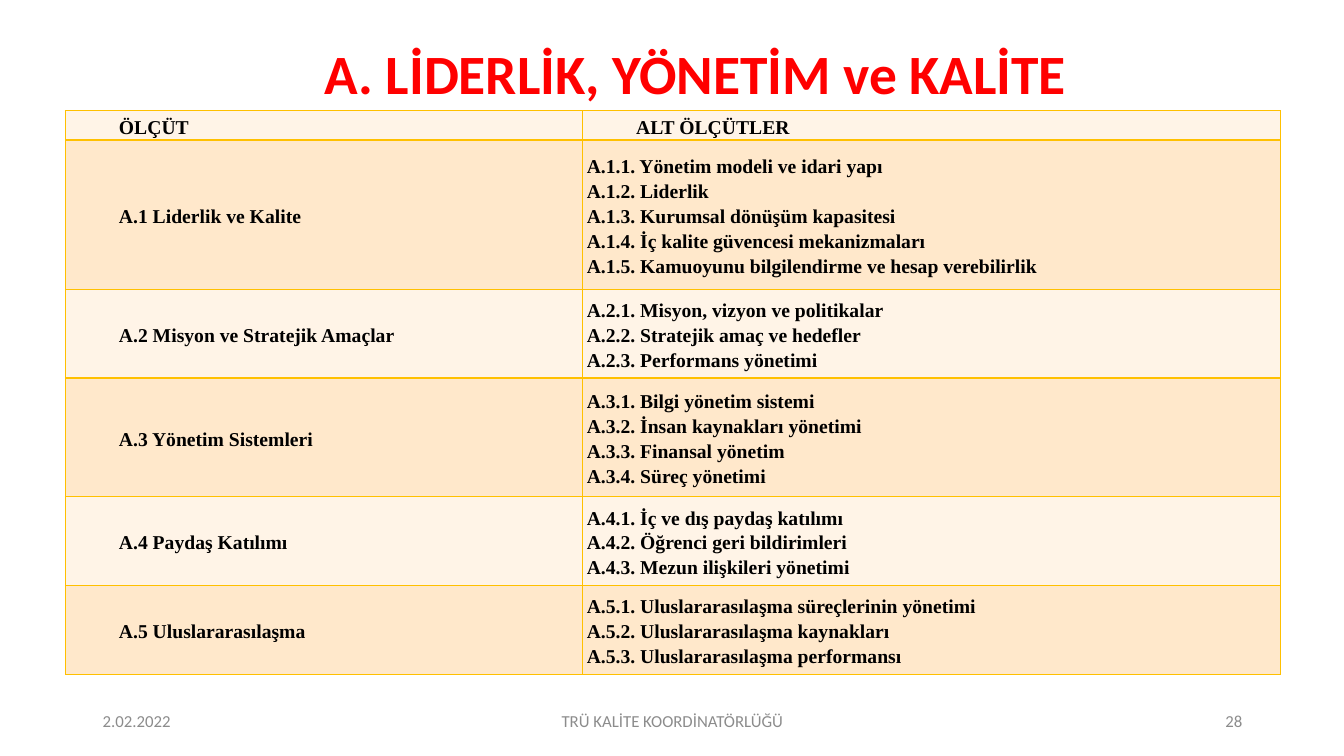
from dataclasses import dataclass

from lxml import etree
from pptx import Presentation
from pptx.dml.color import RGBColor
from pptx.enum.text import MSO_ANCHOR, PP_ALIGN
from pptx.oxml.ns import qn
from pptx.slide import Slide
from pptx.table import Table, _Cell
from pptx.text.text import _Paragraph
from pptx.util import Inches, Pt

LEFT, CENTER, RIGHT = PP_ALIGN.LEFT, PP_ALIGN.CENTER, PP_ALIGN.RIGHT
JUSTIFY = PP_ALIGN.JUSTIFY
MIDDLE = MSO_ANCHOR.MIDDLE

COLORS = {
    "title": "FF0000",
    "footer": "8C8C8C",
    "text": "000000",
    "border": "FFC000",
    "light": "FFF4E7",
    "dark": "FFE8CB",
}
TITLE_FONT = {"name": "Calibri", "size": Pt(39.6), "bold": True}
FOOTER_FONT = {"name": "Calibri", "size": Pt(12), "bold": False}
TABLE_FONT = {"name": "Times New Roman", "size": Pt(14), "bold": True}
CELL_FORMAT = {
    "vertical_anchor": MIDDLE,
    "margin_left": Inches(0.04),
    "margin_right": Inches(0.04),
    "margin_top": Inches(0.01),
    "margin_bottom": Inches(0),
}
COLUMN_WIDTHS = (5.13, 6.92)
HEADER_HEIGHT = 0.29
FIRST_LINE_INDENT = Inches(0.49)


@dataclass(frozen=True)
class Label:
    text: str
    left: float
    top: float
    width: float
    height: float
    alignment: PP_ALIGN
    font: dict
    color: str
    line_spacing: float = 1.0


@dataclass(frozen=True)
class Criterion:
    name: str
    height: float
    subcriteria: tuple[str, ...]


LABELS = (
    Label("A. LİDERLİK, YÖNETİM ve KALİTE", 1.38, 0.4, 11.04, 0.72, CENTER, TITLE_FONT, "title", 0.9),
    Label("2.02.2022", 0.92, 6.95, 3, 0.4, LEFT, FOOTER_FONT, "footer"),
    Label("TRÜ KALİTE KOORDİNATÖRLÜĞÜ", 4.42, 6.95, 4.5, 0.4, CENTER, FOOTER_FONT, "footer"),
    Label("28", 9.42, 6.95, 3, 0.4, RIGHT, FOOTER_FONT, "footer"),
)

CRITERIA = (
    Criterion("Liderlik ve Kalite", 1.48, (
        "Yönetim modeli ve idari yapı",
        "Liderlik",
        "Kurumsal dönüşüm kapasitesi",
        "İç kalite güvencesi mekanizmaları",
        "Kamuoyunu bilgilendirme ve hesap verebilirlik",
    )),
    Criterion("Misyon ve Stratejik Amaçlar", 0.88, (
        "Misyon, vizyon ve politikalar",
        "Stratejik amaç ve hedefler",
        "Performans yönetimi",
    )),
    Criterion("Yönetim Sistemleri", 1.18, (
        "Bilgi yönetim sistemi",
        "İnsan kaynakları yönetimi",
        "Finansal yönetim",
        "Süreç yönetimi",
    )),
    Criterion("Paydaş Katılımı", 0.88, (
        "İç ve dış paydaş katılımı",
        "Öğrenci geri bildirimleri",
        "Mezun ilişkileri yönetimi",
    )),
    Criterion("Uluslararasılaşma", 0.88, (
        "Uluslararasılaşma süreçlerinin yönetimi",
        "Uluslararasılaşma kaynakları",
        "Uluslararasılaşma performansı",
    )),
)


def apply_format(target: object, values: dict) -> None:
    for name, value in values.items():
        setattr(target, name, value)


def write_text(paragraph: _Paragraph, text: str, font: dict, color: str,
               alignment: PP_ALIGN, line_spacing: float) -> None:
    run = paragraph.add_run()
    run.text = text
    apply_format(run.font, font)
    run.font.color.rgb = RGBColor.from_string(COLORS[color])
    apply_format(paragraph, {"alignment": alignment, "line_spacing": line_spacing})


def add_label(slide: Slide, label: Label) -> None:
    box = slide.shapes.add_textbox(
        Inches(label.left), Inches(label.top), Inches(label.width), Inches(label.height))
    frame = box.text_frame
    apply_format(frame, {"word_wrap": True, "vertical_anchor": MIDDLE})
    write_text(frame.paragraphs[0], label.text, label.font, label.color,
               label.alignment, label.line_spacing)


def add_borders(cell: _Cell) -> None:
    properties = cell._tc.get_or_add_tcPr()
    for side in ("lnL", "lnR", "lnT", "lnB"):
        line = etree.SubElement(properties, qn(f"a:{side}"), w=str(Pt(1)))
        fill = etree.SubElement(line, qn("a:solidFill"))
        etree.SubElement(fill, qn("a:srgbClr"), val=COLORS["border"])


def fill_cell(cell: _Cell, lines: list[str], background: str, indented: bool) -> None:
    apply_format(cell, CELL_FORMAT)
    add_borders(cell)
    cell.fill.solid()
    cell.fill.fore_color.rgb = RGBColor.from_string(COLORS[background])
    frame = cell.text_frame
    for index, text in enumerate(lines):
        paragraph = frame.add_paragraph() if index else frame.paragraphs[0]
        write_text(paragraph, text, TABLE_FONT, "text", JUSTIFY, 1.15)
        if indented:
            properties = paragraph._p.get_or_add_pPr()
            properties.set("marL", "0")
            properties.set("indent", str(FIRST_LINE_INDENT))


def fill_criterion(table: Table, number: int, criterion: Criterion) -> None:
    background = "dark" if number % 2 else "light"
    subcriteria = [f"A.{number}.{index}. {name}"
                   for index, name in enumerate(criterion.subcriteria, start=1)]
    fill_cell(table.cell(number, 0), [f"A.{number} {criterion.name}"], background, True)
    fill_cell(table.cell(number, 1), subcriteria, background, False)


def add_criteria_table(slide: Slide) -> None:
    heights = [HEADER_HEIGHT] + [criterion.height for criterion in CRITERIA]
    table = slide.shapes.add_table(
        len(heights), len(COLUMN_WIDTHS), Inches(0.65), Inches(1.1),
        Inches(sum(COLUMN_WIDTHS)), Inches(sum(heights))).table
    for column, width in zip(table.columns, COLUMN_WIDTHS):
        column.width = Inches(width)
    for row, height in zip(table.rows, heights):
        row.height = Inches(height)
    for index, heading in enumerate(("ÖLÇÜT", "ALT ÖLÇÜTLER")):
        fill_cell(table.cell(0, index), [heading], "light", True)
    for number, criterion in enumerate(CRITERIA, start=1):
        fill_criterion(table, number, criterion)


def main() -> None:
    presentation = Presentation()
    apply_format(presentation, {"slide_width": Inches(13.33), "slide_height": Inches(7.5)})
    slide = presentation.slides.add_slide(presentation.slide_layouts[6])
    for label in LABELS:
        add_label(slide, label)
    add_criteria_table(slide)
    presentation.save("out.pptx")


if __name__ == "__main__":
    main()
